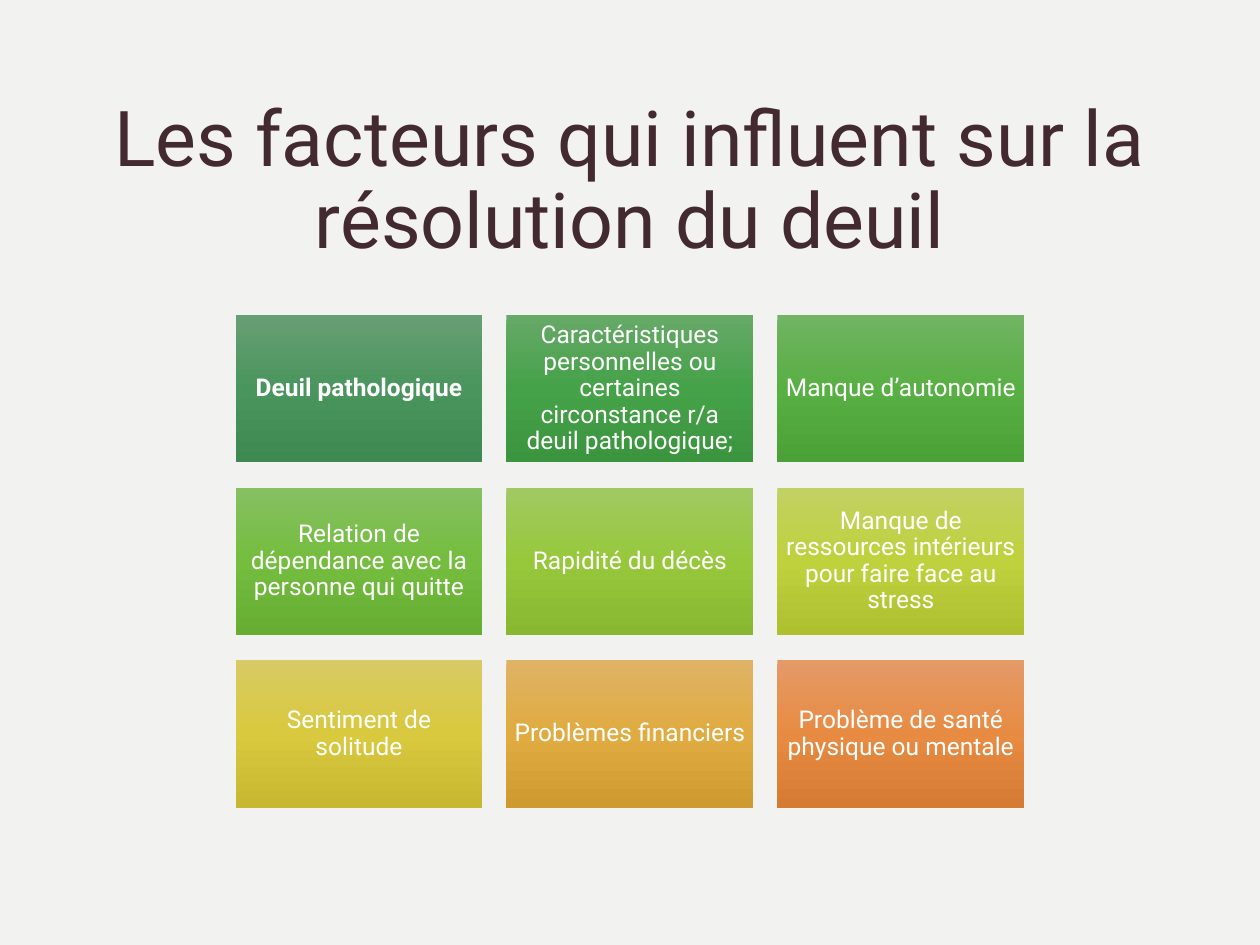
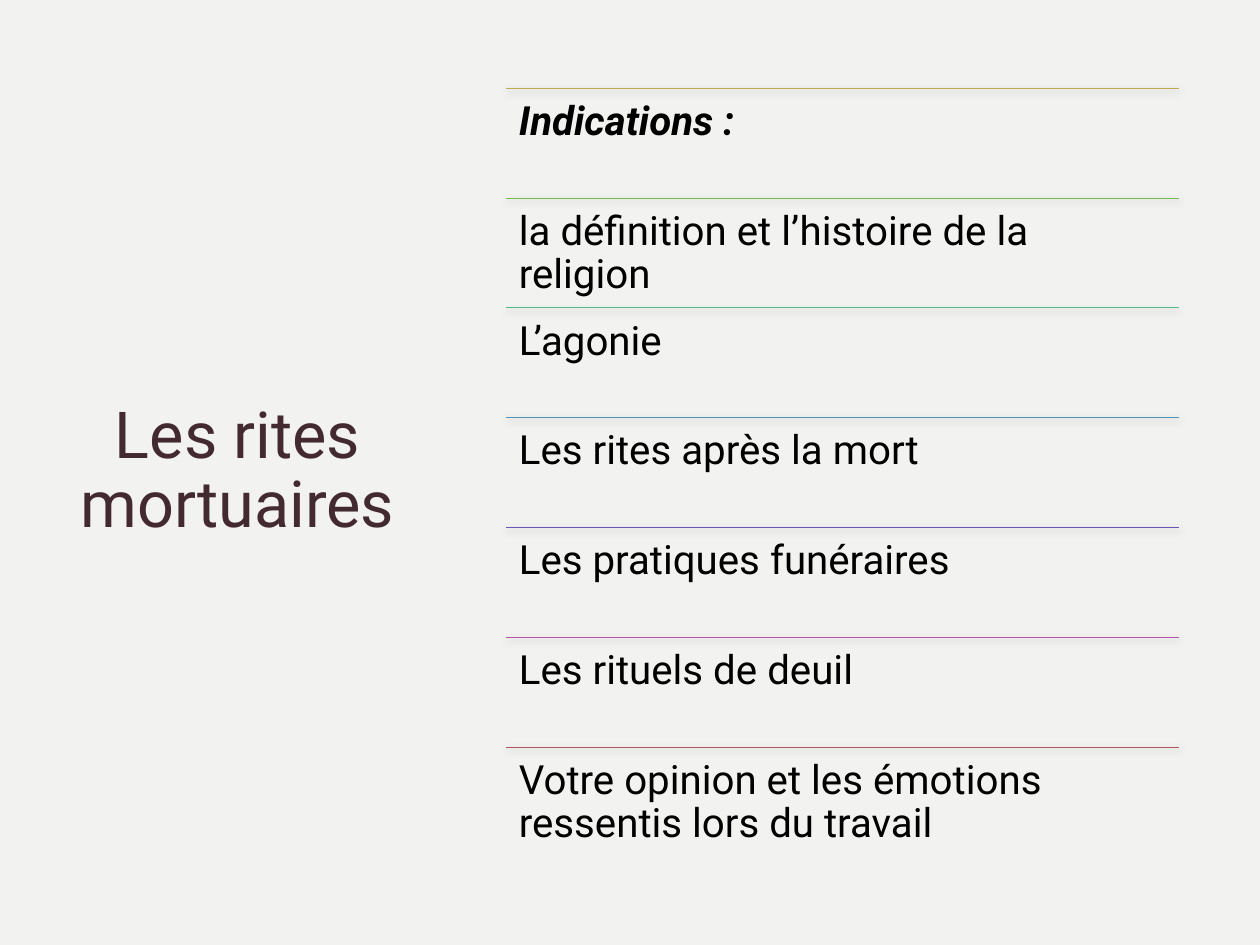
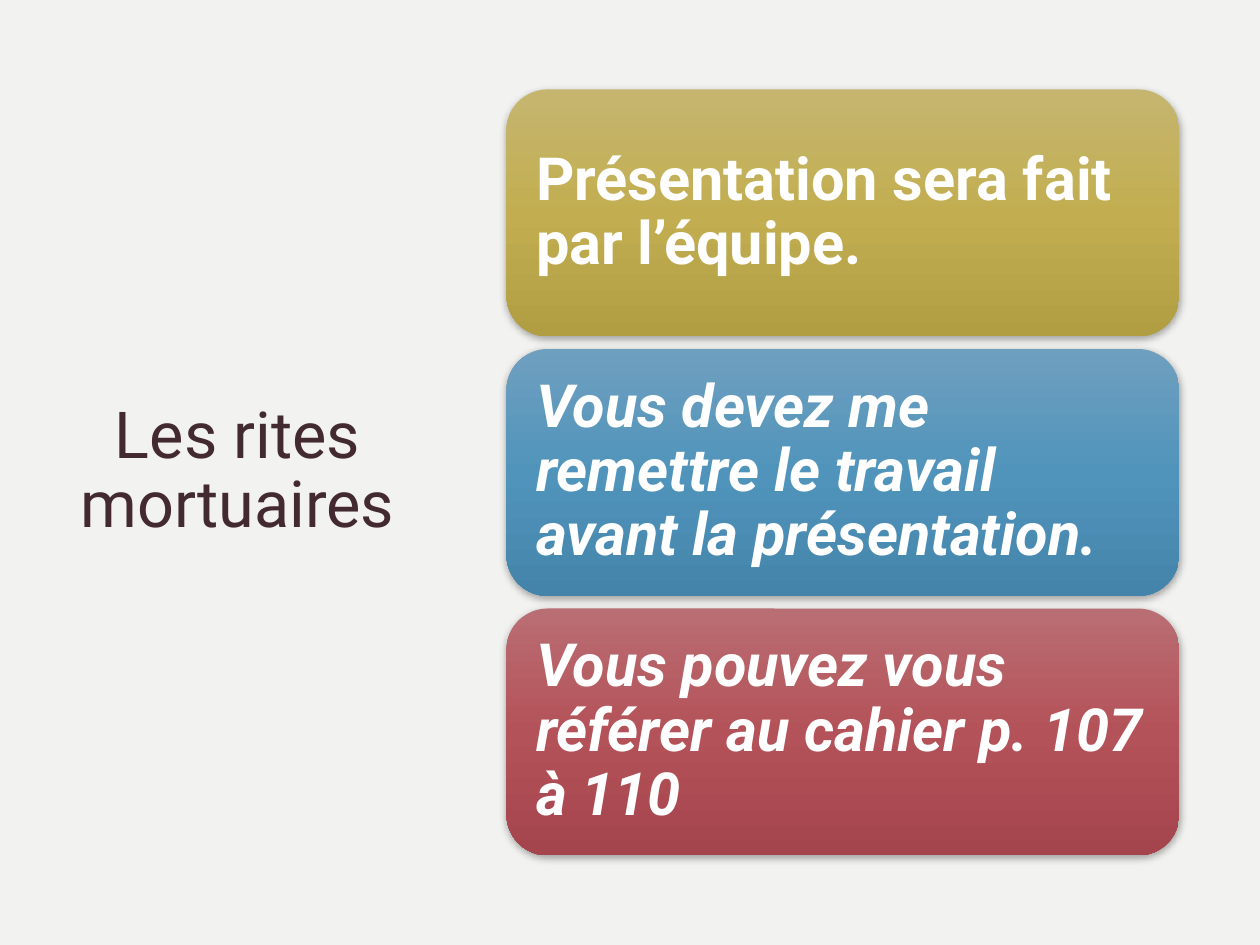
from lxml import etree
from pptx import Presentation
from pptx.dml.color import RGBColor
from pptx.enum.shapes import MSO_CONNECTOR, MSO_SHAPE
from pptx.enum.text import MSO_ANCHOR, PP_ALIGN
from pptx.oxml.ns import qn
from pptx.util import Inches, Pt

STRAIGHT = MSO_CONNECTOR.STRAIGHT
RECT, ROUNDED = MSO_SHAPE.RECTANGLE, MSO_SHAPE.ROUNDED_RECTANGLE
TOP, MIDDLE = MSO_ANCHOR.TOP, MSO_ANCHOR.MIDDLE
LEFT, CENTER = PP_ALIGN.LEFT, PP_ALIGN.CENTER

FONT = "Roboto"
COLORS = {"background": "F2F2F0", "title": "432A30", "body": "000000",
          "light": "FFFFFF", "shadow": "000000"}

# Column on the right of the two "rites" slides
COLUMN_LEFT, COLUMN_TOP, COLUMN_WIDTH, COLUMN_HEIGHT = 4.02, 0.7, 5.34, 6.1


def rgb(color):
    return RGBColor.from_string(color)


def write_text(frame, text, *, size, color, bold=False, italic=False,
               align=LEFT, anchor=TOP, inset=0.1, spacing=0.9):
    frame.word_wrap = True
    frame.vertical_anchor = anchor
    frame.margin_left = frame.margin_right = Inches(inset)
    frame.margin_top = frame.margin_bottom = Inches(inset)
    paragraph = frame.paragraphs[0]
    paragraph.alignment = align
    paragraph.line_spacing = spacing
    run = paragraph.add_run()
    run.text = text
    font = run.font
    font.name, font.size, font.bold, font.italic = FONT, Pt(size), bold, italic
    font.color.rgb = rgb(color)


def add_color(parent, color):
    return etree.SubElement(parent, qn("a:srgbClr"), val=color)


def add_soft_shadow(effects):
    shadow = etree.SubElement(
        effects, qn("a:outerShdw"), blurRad=str(Pt(4.5)), dist=str(Pt(1.5)),
        dir="5400000", rotWithShape="0")
    etree.SubElement(add_color(shadow, COLORS["shadow"]), qn("a:alpha"), val="35000")


class Deck:
    """Holds the shared style and the slide being built."""

    def __init__(self):
        self.presentation = Presentation()
        self.presentation.slide_width = Inches(10)
        self.presentation.slide_height = Inches(7.5)
        self.slide = None

    def new_slide(self):
        self.slide = self.presentation.slides.add_slide(
            self.presentation.slide_layouts[6])
        fill = self.slide.background.fill
        fill.solid()
        fill.fore_color.rgb = rgb(COLORS["background"])

    def text(self, text, left, top, width, height, **style):
        box = self.slide.shapes.add_textbox(
            Inches(left), Inches(top), Inches(width), Inches(height))
        write_text(box.text_frame, text, **style)

    def title(self, text, left, top, width, height, size, anchor):
        self.text(text, left, top, width, height, size=size, anchor=anchor,
                  color=COLORS["title"], align=CENTER, inset=0.05, spacing=0.89)

    def side_title(self, text):
        self.title(text, 0.53, COLUMN_TOP, 2.71, COLUMN_HEIGHT, 37, MIDDLE)

    def card(self, kind, text, left, top, width, height, gradient,
             shadow=False, **style):
        card = self.slide.shapes.add_shape(
            kind, Inches(left), Inches(top), Inches(width), Inches(height))
        card.line.fill.background()
        # Three-stop gradient, top to bottom
        card.fill.gradient()
        card.fill.gradient_angle = 270
        properties = card.element.spPr
        stops = properties.find(".//" + qn("a:gsLst"))
        stops.clear()
        for position, color in zip((0, 50000, 100000), gradient):
            add_color(etree.SubElement(stops, qn("a:gs"), pos=str(position)), color)
        card.shadow.inherit = False
        if shadow:
            add_soft_shadow(properties.find(qn("a:effectLst")))
        write_text(card.text_frame, text, color=COLORS["light"],
                   anchor=MIDDLE, **style)

    def rule(self, left, top, width, color):
        rule = self.slide.shapes.add_connector(
            STRAIGHT, Inches(left), Inches(top), Inches(left + width), Inches(top))
        rule.line.color.rgb = rgb(color)
        rule.line.width = Pt(0.5)
        add_soft_shadow(etree.SubElement(rule.element.spPr, qn("a:effectLst")))


FACTORS = [
    ("Deuil pathologique", ("689E74", "4A955D", "3E8851")),
    ("Caractéristiques personnelles ou certaines circonstance r/a deuil pathologique;",
     ("66A968", "46A249", "3B943E")),
    ("Manque d’autonomie", ("71B464", "58AF43", "4BA037")),
    ("Relation de dépendance avec la personne qui quitte",
     ("86C062", "74BD3E", "66AD32")),
    ("Rapidité du décès", ("A1C962", "97C83C", "88B730")),
    ("Manque de ressources intérieurs pour faire face au stress",
     ("C2D163", "BFD13D", "AEBF30")),
    ("Sentiment de solitude", ("D8CA64", "D9C93E", "C7B731")),
    ("Problèmes financiers", ("DFB365", "E0AB40", "CF9B31")),
    ("Problème de santé physique ou mentale", ("E59A67", "E78B43", "D67B33")),
]

TOPICS = [
    ("Indications :", "BDAB56"),
    ("la définition et l’histoire de la religion", "77BB56"),
    ("L’agonie", "56B98A"),
    ("Les rites après la mort", "5692B7"),
    ("Les pratiques funéraires", "6B56B4"),
    ("Les rituels de deuil", "B256AC"),
    ("Votre opinion et les émotions ressentis lors du travail", "B0565D"),
]

INSTRUCTIONS = [
    ("Présentation sera fait par l’équipe.", ("C5B56F", "C2AE51", "B19E43")),
    ("Vous devez me remettre le travail avant la présentation.",
     ("6E9FBF", "5194BB", "4484AB")),
    ("Vous pouvez vous référer au cahier p. 107 à 110",
     ("B96E73", "B45259", "A4444C")),
]


def build_factors(deck):
    deck.new_slide()
    deck.title("Les facteurs qui influent sur la résolution du deuil",
               0.53, 0.75, 8.94, 1.62, 44, TOP)
    width, height = 1.96, 1.17
    column_pitch, row_pitch = 2.15, 1.37
    for index, (factor, gradient) in enumerate(FACTORS):
        row, column = divmod(index, 3)
        deck.card(RECT, factor, 1.87 + column * column_pitch,
                  2.5 + row * row_pitch, width, height, gradient,
                  size=14, bold=index == 0, align=CENTER, inset=0.06)


def build_topics(deck):
    deck.new_slide()
    deck.side_title("Les rites mortuaires")
    height = COLUMN_HEIGHT / len(TOPICS)
    for index, (topic, color) in enumerate(TOPICS):
        top = COLUMN_TOP + index * height
        heading = index == 0
        deck.rule(COLUMN_LEFT, top, COLUMN_WIDTH, color)
        deck.text(topic, COLUMN_LEFT, top, COLUMN_WIDTH, height, size=23,
                  color=COLORS["body"], bold=heading, italic=heading)


def build_instructions(deck):
    deck.new_slide()
    deck.side_title("Les rites mortuaires")
    height, pitch = 1.96, 2.06
    for index, (instruction, gradient) in enumerate(INSTRUCTIONS):
        deck.card(ROUNDED, instruction, COLUMN_LEFT, 0.71 + index * pitch,
                  COLUMN_WIDTH, height, gradient, shadow=True,
                  size=34, bold=True, italic=index > 0, inset=0.14)


def main():
    deck = Deck()
    build_factors(deck)
    build_topics(deck)
    build_instructions(deck)
    deck.presentation.save("out.pptx")


if __name__ == "__main__":
    main()
